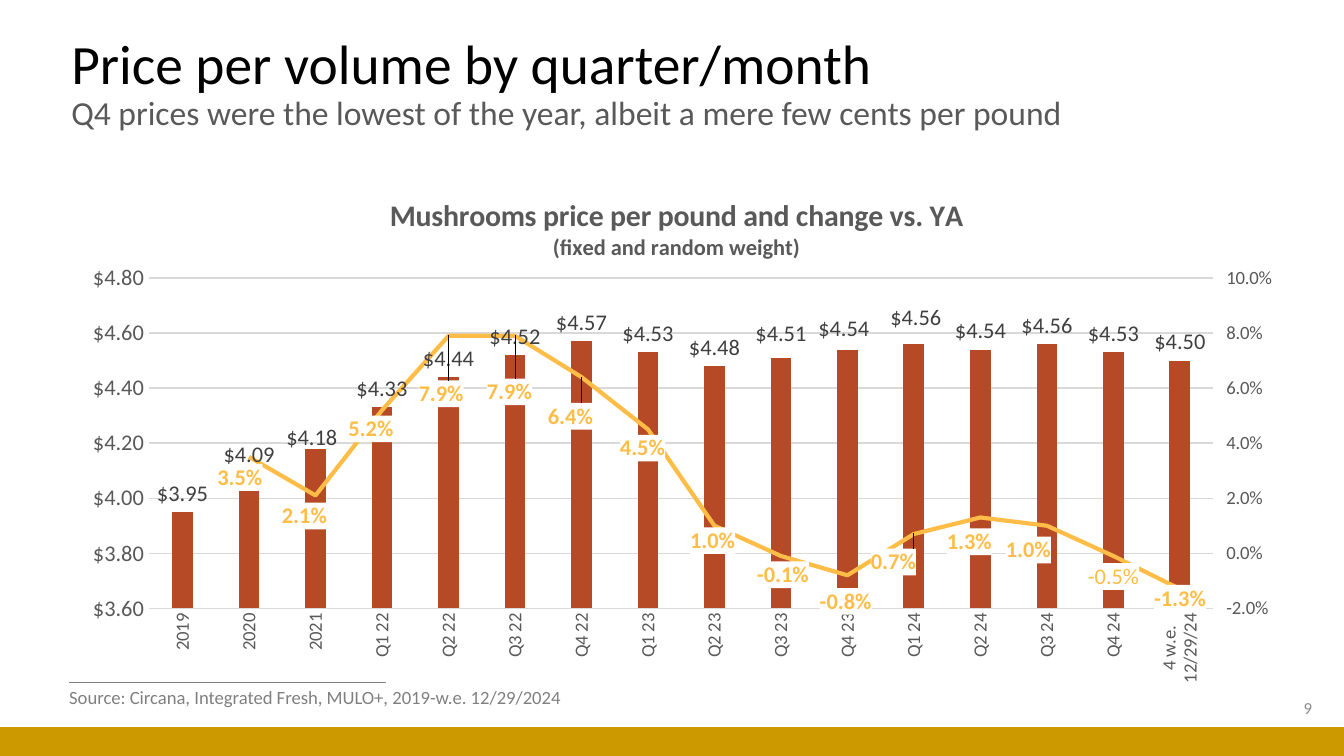
from pptx import Presentation
from pptx.chart.axis import ValueAxis
from pptx.chart.data import CategoryChartData
from pptx.dml.color import RGBColor
from pptx.enum.chart import (XL_CHART_TYPE, XL_LABEL_POSITION, XL_MARKER_STYLE,
                             XL_TICK_LABEL_POSITION, XL_TICK_MARK)
from pptx.enum.shapes import MSO_CONNECTOR, MSO_SHAPE
from pptx.enum.text import MSO_ANCHOR, MSO_AUTO_SIZE, PP_ALIGN
from pptx.oxml import parse_xml
from pptx.oxml.ns import nsdecls
from pptx.util import Pt

FONT = "Calibri"
GREY, LIGHT_GREY = "595959", "D9D9D9"
RUST, AMBER, GOLD = "B64926", "FFBD47", "CC9900"
PRICE_FORMAT, CHANGE_FORMAT = "[$$-409]#,##0.00", "0.0%"

PERIODS = ["2019", "2020", "2021"]
PERIODS += [f"Q{quarter} {year}" for year in (22, 23, 24) for quarter in (1, 2, 3, 4)]
PERIODS += ["4 w.e.\n12/29/24"]
PRICES = [3.95, 4.09, 4.18, 4.33, 4.44, 4.52, 4.57, 4.53,
          4.48, 4.51, 4.54, 4.56, 4.54, 4.56, 4.53, 4.5]
CHANGES = [None, 0.035, 0.021, 0.052, 0.079, 0.079, 0.064, 0.045,
           0.01, -0.001, -0.008, 0.007, 0.013, 0.01, -0.001, -0.013]

# Label shifts in points, from the usual place above the bar or line point
PRICE_SHIFTS = {2: (-2, 4), 9: (0, -3), 10: (-2, -1), 11: (1, -4)}
CHANGE_SHIFTS = dict(enumerate(
    [(-5, 21), (-6, 21), (-6, 20), (-4, 41), (-3, 40), (-6, 31), (-3, 20), (-1, 18),
     (1, 20), (-1, 24), (-11, 25), (-6, 23), (-10, 23), (0, 21), (0, 15)], start=1))


def color(value):
    return RGBColor.from_string(value)


def format_font(font, size, value, bold=False):
    font.name, font.size, font.bold = FONT, Pt(size), bold
    font.color.rgb = color(value)


def layout_xml(box, chart_size):
    """Manual chart layout in points: a shift (x, y) or an inner plot box (x, y, w, h)."""
    parts = ""
    if len(box) == 4:
        parts = '<c:layoutTarget val="inner"/><c:xMode val="edge"/><c:yMode val="edge"/>'
    for name, length, total in zip("xywh", box, chart_size * 2):
        parts += f'<c:{name} val="{length / total:.4f}"/>'
    return parse_xml(f'<c:layout {nsdecls("c")}><c:manualLayout>{parts}'
                     '</c:manualLayout></c:layout>')


def fill_xml(value):
    return parse_xml(f'<c:spPr {nsdecls("c", "a")}><a:solidFill><a:srgbClr val="{value}"/>'
                     '</a:solidFill><a:ln><a:noFill/></a:ln></c:spPr>')


def add_title(slide, left, top, width, height):
    title = slide.shapes.title
    title.left, title.top, title.width, title.height = map(Pt, (left, top, width, height))
    frame = title.text_frame
    frame.text = ("Price per volume by quarter/month\v"
                  "Q4 prices were the lowest of the year, albeit a mere few cents per pound")
    frame.auto_size, frame.vertical_anchor = MSO_AUTO_SIZE.NONE, MSO_ANCHOR.MIDDLE
    paragraph = frame.paragraphs[0]
    paragraph.alignment, paragraph.line_spacing = PP_ALIGN.LEFT, 0.9
    heading, subheading = paragraph.runs
    format_font(heading.font, 29.7, "000000")
    format_font(subheading.font, 18, GREY)


def add_text(slide, box, text, size, value, alignment=PP_ALIGN.LEFT, wrap=True):
    frame = slide.shapes.add_textbox(*map(Pt, box)).text_frame
    frame.text = text
    frame.word_wrap, frame.vertical_anchor = wrap, MSO_ANCHOR.MIDDLE
    frame.paragraphs[0].alignment = alignment
    format_font(frame.paragraphs[0].runs[0].font, size, value)


def add_footer(slide, left, top, width, height):
    # Gold band at the bottom of the box
    band = slide.shapes.add_shape(MSO_SHAPE.RECTANGLE, Pt(left), Pt(top + height - 15.5),
                                  Pt(width), Pt(15.5))
    band.shadow.inherit = False
    band.fill.solid()
    band.fill.fore_color.rgb = color(GOLD)
    band.line.fill.background()
    # Rule above the source
    rule = slide.shapes.add_connector(MSO_CONNECTOR.STRAIGHT, Pt(left + 37), Pt(top + 1.5),
                                      Pt(left + 207), Pt(top + 1.5))
    rule.line.color.rgb, rule.line.width = color("808080"), Pt(0.5)
    rule.element.spPr.append(parse_xml(f'<a:effectLst {nsdecls("a")}/>'))
    # Source and slide number
    add_text(slide, (left + 30, top, 284, 19),
             "Source: Circana, Integrated Fresh, MULO+, 2019-w.e. 12/29/2024",
             10, "808080", wrap=False)
    add_text(slide, (left + 548, top + 4, 162, 22), "9", 9, "8C8C8C", PP_ALIGN.RIGHT)


def move_to_line_plot(chart):
    """Turn the second series into a line on a right-hand axis; return both value axes."""
    plot_area = chart.element.xpath("c:chart/c:plotArea")[0]
    bar_plot = plot_area.xpath("c:barChart")[0]
    series = bar_plot.xpath("c:ser")[1]
    for element in series.xpath("c:invertIfNegative"):
        series.remove(element)
    line_plot = parse_xml(
        f'<c:lineChart {nsdecls("c")}><c:grouping val="standard"/><c:varyColors val="0"/>'
        '<c:marker val="1"/><c:axId val="501"/><c:axId val="502"/></c:lineChart>')
    line_plot.insert(2, series)
    bar_plot.addnext(line_plot)
    anchor = plot_area.xpath("c:valAx")[0]
    for tag, number, other, hidden, side, end in (
            ("valAx", 502, 501, 0, "r", '<c:crosses val="max"/><c:crossBetween val="between"/>'),
            ("catAx", 501, 502, 1, "b", '<c:crosses val="autoZero"/>')):
        anchor.addnext(parse_xml(
            f'<c:{tag} {nsdecls("c")}><c:axId val="{number}"/><c:scaling>'
            f'<c:orientation val="minMax"/></c:scaling><c:delete val="{hidden}"/>'
            f'<c:axPos val="{side}"/><c:crossAx val="{other}"/>{end}</c:{tag}>'))
    return [ValueAxis(element) for element in plot_area.xpath("c:valAx")]


def format_value_axis(axis, low, high, step, number_format, size, tick):
    axis.minimum_scale, axis.maximum_scale, axis.major_unit = low, high, step
    axis.major_tick_mark, axis.minor_tick_mark = tick, XL_TICK_MARK.NONE
    axis.tick_label_position = XL_TICK_LABEL_POSITION.NEXT_TO_AXIS
    axis.tick_labels.number_format = number_format
    axis.tick_labels.number_format_is_linked = False
    format_font(axis.tick_labels.font, size, GREY)
    axis.format.line.fill.background()


def format_labels(chart, series, number, shifts, chart_size, position, number_format,
                  value, bold, fill):
    labels = series.data_labels
    labels.show_value, labels.position = True, position
    labels.number_format, labels.number_format_is_linked = number_format, False
    format_font(labels.font, 12, value, bold)
    group = chart.element.xpath(f'.//c:ser[c:idx/@val="{number}"]/c:dLbls')[0]
    for index, shift in shifts.items():
        label = series.points[index].data_label
        format_font(label.font, 12, value, bold)
        label.position = position
        element = group.xpath(f'c:dLbl[c:idx/@val="{index}"]')[0]
        element.insert(1, layout_xml(shift, chart_size))
        element.insert(2, parse_xml(f'<c:numFmt {nsdecls("c")} formatCode="{number_format}" '
                                    'sourceLinked="0"/>'))
    # Label background, behind the whole series and each moved label
    if fill:
        for number_format_element in group.xpath("c:numFmt | c:dLbl/c:numFmt"):
            number_format_element.addnext(fill_xml(fill))
    # No leader lines to the moved labels
    for element in group.xpath("c:showLeaderLines"):
        group.remove(element)
    group.append(parse_xml(
        f'<c:extLst {nsdecls("c")}><c:ext uri="{{CE6537A1-D6FC-4f65-9D91-7224C49458BB}}" '
        'xmlns:c15="http://schemas.microsoft.com/office/drawing/2012/chart">'
        '<c15:showLeaderLines val="0"/></c:ext></c:extLst>'))


def add_price_chart(slide, left, top, width, height):
    size = (width, height)
    data = CategoryChartData()
    data.categories = PERIODS
    data.add_series("Price per pound", PRICES)
    data.add_series("Change vs. YA", CHANGES)
    chart = slide.shapes.add_chart(XL_CHART_TYPE.COLUMN_CLUSTERED, Pt(left), Pt(top),
                                   Pt(width), Pt(height), data).chart
    format_font(chart.font, 10, "000000")
    chart.has_legend = False

    # Chart title
    title_frame = chart.chart_title.text_frame
    title_frame.text = "Mushrooms price per pound and change vs. YA\n(fixed and random weight)"
    for paragraph, points in zip(title_frame.paragraphs, (16, 12)):
        format_font(paragraph.runs[0].font, points, GREY, True)

    # Axes
    price_axis, change_axis = move_to_line_plot(chart)
    format_value_axis(price_axis, 3.6, 4.8, 0.2, PRICE_FORMAT, 12, XL_TICK_MARK.NONE)
    format_value_axis(change_axis, -0.02, 0.1, 0.02, CHANGE_FORMAT, 10, XL_TICK_MARK.OUTSIDE)
    period_axis = chart.category_axis
    period_axis.major_tick_mark = XL_TICK_MARK.NONE
    period_axis.tick_label_position = XL_TICK_LABEL_POSITION.NEXT_TO_AXIS
    format_font(period_axis.tick_labels.font, 10, GREY)
    chart.element.xpath(".//c:catAx/c:txPr/a:bodyPr")[0].set("rot", "-5400000")
    for line in (period_axis.format.line, price_axis.major_gridlines.format.line):
        line.color.rgb, line.width = color(LIGHT_GREY), Pt(0.75)

    # Price columns and change line
    columns, lines = chart.plots
    columns.gap_width, columns.overlap = 219, -27
    columns.vary_by_categories = False
    prices, changes = columns.series[0], lines.series[0]
    prices.format.fill.solid()
    prices.format.fill.fore_color.rgb = color(RUST)
    changes.format.line.color.rgb, changes.format.line.width = color(AMBER), Pt(2.25)
    changes.marker.style, changes.smooth = XL_MARKER_STYLE.NONE, False

    # Data labels, one of them typed by hand
    format_labels(chart, prices, 0, PRICE_SHIFTS, size, XL_LABEL_POSITION.OUTSIDE_END,
                  PRICE_FORMAT, "404040", False, None)
    format_labels(chart, changes, 1, CHANGE_SHIFTS, size, XL_LABEL_POSITION.ABOVE,
                  CHANGE_FORMAT, AMBER, True, "FFFFFF")
    typed_frame = changes.points[14].data_label.text_frame
    typed_frame.text = "-0.5%"
    format_font(typed_frame.paragraphs[0].runs[0].font, 12, AMBER)

    # Plot area
    plot_area = chart.element.xpath("c:chart/c:plotArea")[0]
    for element in plot_area.xpath("c:layout"):
        plot_area.remove(element)
    plot_area.insert(0, layout_xml((49, 56, 570, 177), size))


presentation = Presentation()
presentation.slide_width, presentation.slide_height = Pt(720), Pt(405)
main_slide = presentation.slides.add_slide(presentation.slide_layouts[5])
add_footer(main_slide, 0, 364, 720, 41)
add_title(main_slide, 31, 26, 679, 39)
add_price_chart(main_slide, 31, 93, 663, 286)
presentation.save("out.pptx")
